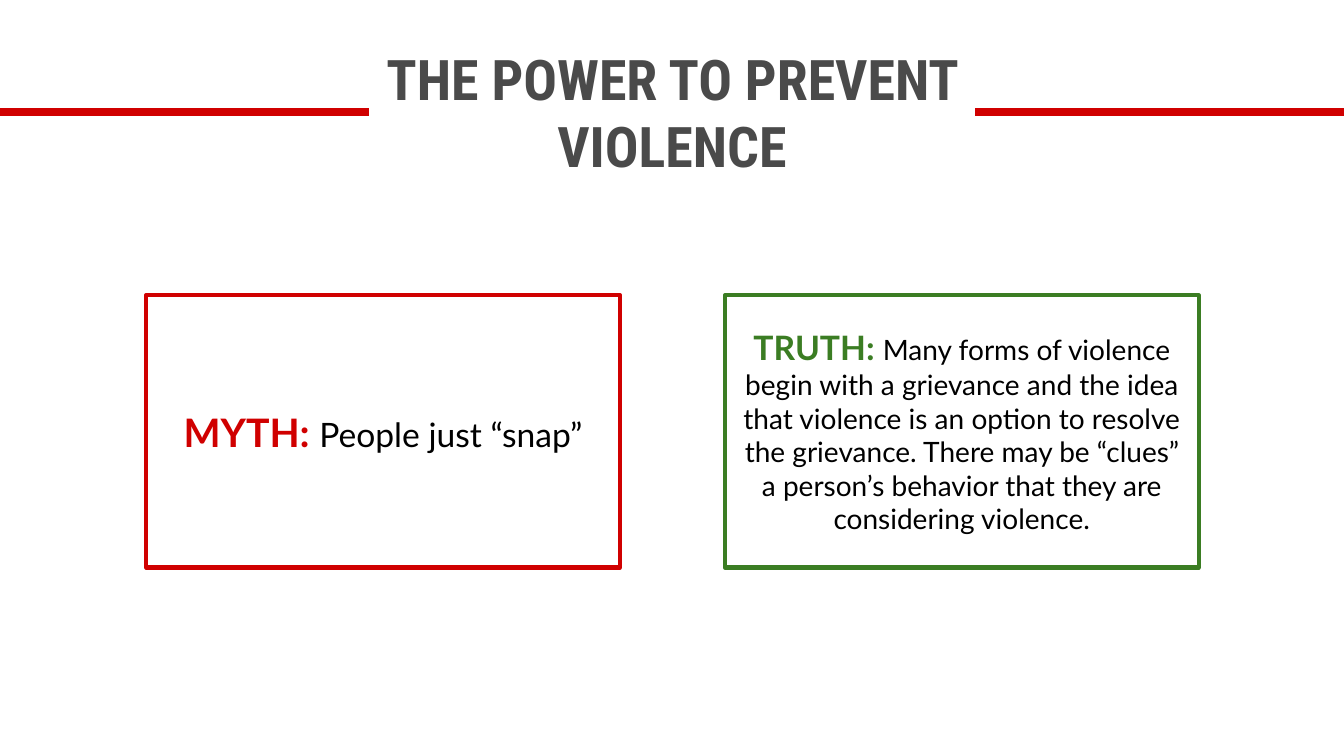
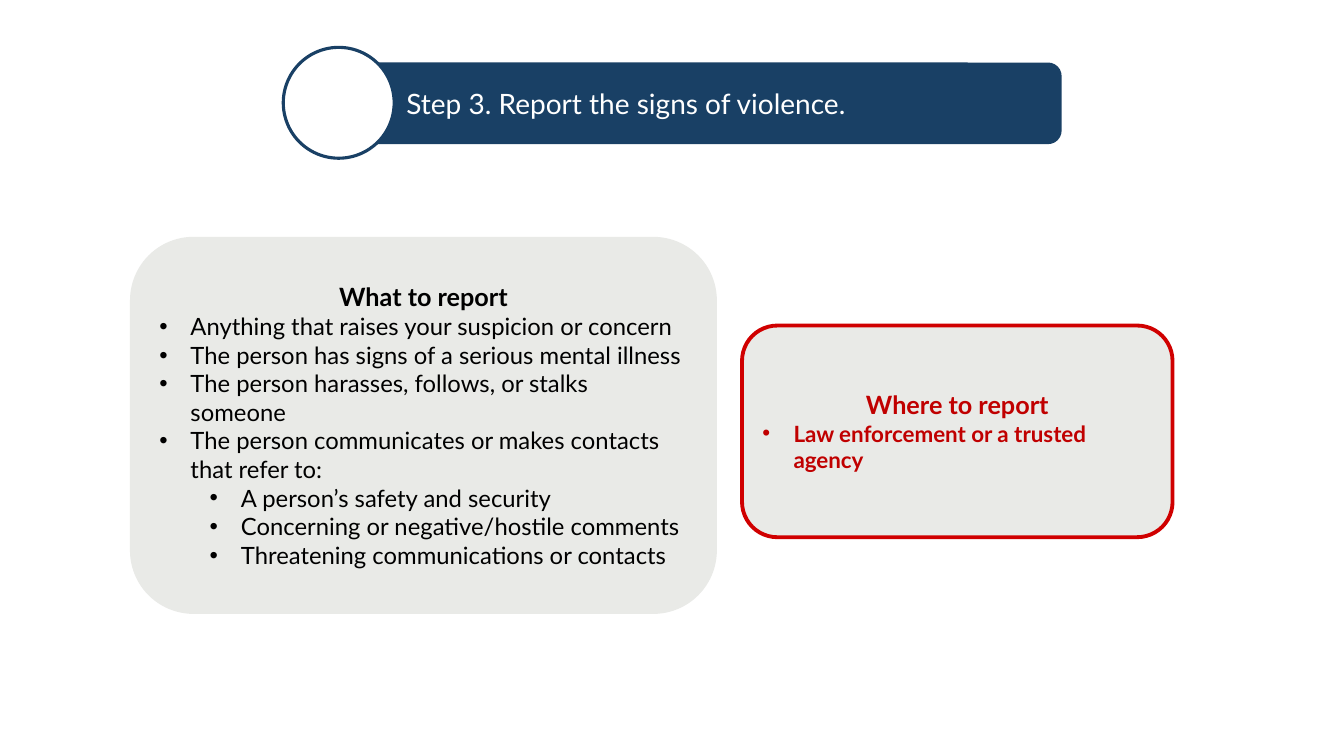
"""Build two slides on preventing and reporting violence."""
import pptx
import pptx.dml.color
import pptx.enum.shapes
import pptx.enum.text
import pptx.oxml.ns
import pptx.util
from lxml import etree

Inches = pptx.util.Inches
Pt = pptx.util.Pt
Shape = pptx.enum.shapes.MSO_SHAPE
Align = pptx.enum.text.PP_ALIGN
qn = pptx.oxml.ns.qn

COLORS = {
    "white": "FFFFFF", "black": "000000", "heading": "4A4A4A",
    "red": "D00000", "dark_red": "C00000", "green": "3B7D23",
    "navy": "194065", "panel": "E9EAE7",
}
BODY_FONT = "Lato"
TITLE_FONT = "Roboto Condensed"
HANG = 0.31
LEVEL_STEP = 0.5


def rgb(name):
    return pptx.dml.color.RGBColor.from_string(COLORS[name])


class Deck:
    def __init__(self):
        self.presentation = pptx.Presentation()
        self.presentation.slide_width = Inches(13.33)
        self.presentation.slide_height = Inches(7.5)
        self.slide = None

    def new_slide(self):
        layout = self.presentation.slide_layouts.get_by_name("Title Only")
        self.slide = self.presentation.slides.add_slide(layout)

    def run(self, paragraph, text, size, color, bold=False, font=BODY_FONT):
        run = paragraph.add_run()
        run.text = text
        run.font.name = font
        run.font.size = Pt(size)
        run.font.bold = bold
        run.font.color.rgb = rgb(color)

    def title(self, text, box, size, color, align, bold=False, font=BODY_FONT, fill=None):
        title = self.slide.shapes.title
        title.left, title.top, title.width, title.height = map(Inches, box)
        if fill:
            title.fill.solid()
            title.fill.fore_color.rgb = rgb(fill)
        frame = title.text_frame
        frame.auto_size = pptx.enum.text.MSO_AUTO_SIZE.NONE
        frame.word_wrap = True
        frame.vertical_anchor = pptx.enum.text.MSO_ANCHOR.MIDDLE
        frame.paragraphs[0].alignment = align
        self.run(frame.paragraphs[0], text, size, color, bold, font)

    def behind_title(self, shape):
        self.slide.shapes.title.element.addprevious(shape.element)

    def rule(self, top, color, width):
        rule = self.slide.shapes.add_connector(
            pptx.enum.shapes.MSO_CONNECTOR.STRAIGHT,
            0, Inches(top), self.presentation.slide_width, Inches(top))
        rule.line.color.rgb = rgb(color)
        rule.line.width = Pt(width)
        etree.SubElement(rule.element.spPr, qn("a:effectLst"))
        return rule

    def panel(self, kind, box, fill=None, line=None, width=0):
        panel = self.slide.shapes.add_shape(kind, *map(Inches, box))
        panel.shadow.inherit = False
        if fill:
            panel.fill.solid()
            panel.fill.fore_color.rgb = rgb(fill)
        else:
            panel.fill.background()
        if line:
            panel.line.color.rgb = rgb(line)
            panel.line.width = Pt(width)
        else:
            panel.line.fill.background()
        panel.text_frame.word_wrap = True
        panel.text_frame.vertical_anchor = pptx.enum.text.MSO_ANCHOR.MIDDLE
        return panel

    def statement(self, left, label, text, color, size):
        card = self.panel(Shape.RECTANGLE, (left, 2.93, 4.7, 2.7), line=color, width=3)
        paragraph = card.text_frame.paragraphs[0]
        paragraph.alignment = Align.CENTER
        self.run(paragraph, label + " ", size + 4, color, bold=True)
        self.run(paragraph, text, size, "black")

    def bullet(self, frame, text, level, size, color, bold):
        paragraph = frame.add_paragraph()
        paragraph.alignment = Align.LEFT
        paragraph.level = level
        properties = paragraph._p.get_or_add_pPr()
        properties.set("marL", str(Inches(HANG + level * LEVEL_STEP)))
        properties.set("indent", str(Inches(-HANG)))
        etree.SubElement(properties, qn("a:buFont"), typeface="Arial")
        etree.SubElement(properties, qn("a:buChar"), char="•")
        self.run(paragraph, text, size, color, bold)

    def checklist(self, box, heading, items, size, color, line, width, bold=False):
        frame = self.panel(Shape.ROUNDED_RECTANGLE, box, "panel", line, width).text_frame
        frame.paragraphs[0].alignment = Align.CENTER
        self.run(frame.paragraphs[0], heading, 18, color, bold=True)
        for level, text in items:
            self.bullet(frame, text, level, size, color, bold)


def myth_and_truth(deck):
    deck.new_slide()
    deck.title("THE POWER TO PREVENT VIOLENCE", (3.66, 0.43, 6.01, 1.36), 40,
               "heading", Align.CENTER, bold=True, font=TITLE_FONT, fill="white")
    deck.behind_title(deck.rule(1.11, "red", 6))
    deck.statement(1.45, "MYTH:", "People just “snap”", "red", 24)
    deck.statement(
        7.19, "TRUTH:",
        "Many forms of violence begin with a grievance and the idea that violence "
        "is an option to resolve the grievance. There may be “clues” a person’s "
        "behavior that they are considering violence.", "green", 20)


def report_signs(deck):
    deck.new_slide()
    deck.title("Step 3. Report the signs of violence.", (3.93, 0.62, 6.6, 0.81), 20,
               "white", Align.LEFT)
    deck.behind_title(deck.panel(Shape.ROUNDED_RECTANGLE, (2.9, 0.62, 7.63, 0.81), "navy"))
    deck.behind_title(deck.panel(Shape.OVAL, (2.81, 0.47, 1.1, 1.1), "white", "navy", 2.25))
    deck.checklist((1.3, 2.36, 5.8, 3.72), "What to report", [
        (0, "Anything that raises your suspicion or concern"),
        (0, "The person has signs of a serious mental illness"),
        (0, "The person harasses, follows, or stalks someone"),
        (0, "The person communicates or makes contacts that refer to:"),
        (1, "A person’s safety and security"),
        (1, "Concerning or negative/hostile comments"),
        (1, "Threatening communications or contacts"),
    ], 17, "black", "panel", 1.5)
    deck.checklist((7.36, 3.23, 4.27, 2.1), "Where to report", [
        (0, "Law enforcement or a trusted agency"),
    ], 16, "dark_red", "red", 2.75, bold=True)


def main():
    deck = Deck()
    myth_and_truth(deck)
    report_signs(deck)
    deck.presentation.save("out.pptx")


if __name__ == "__main__":
    main()
